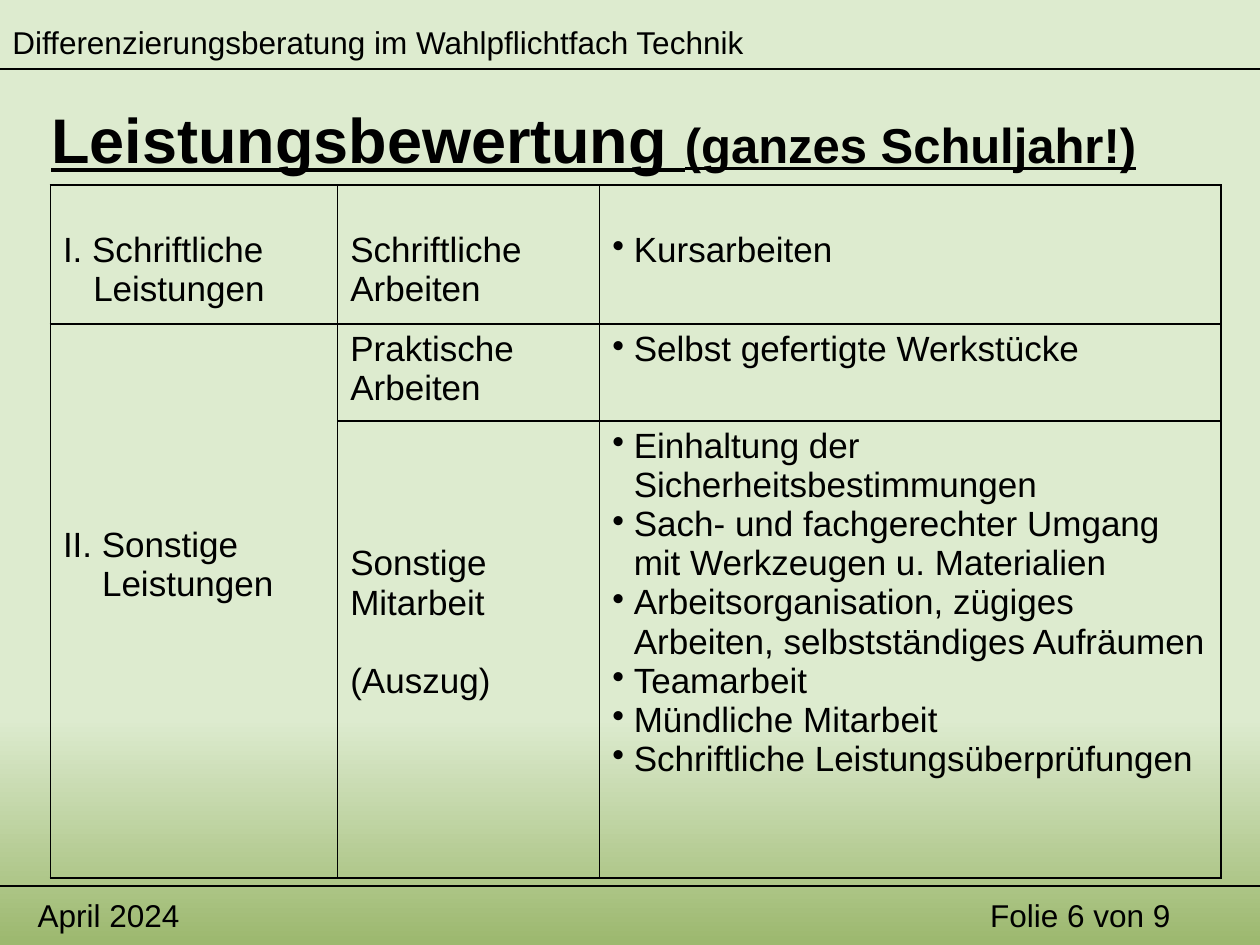
"""Builds the slide on grading in the elective subject Technik."""
from copy import deepcopy

from lxml import etree
from pptx import Presentation
from pptx import util as u
from pptx.dml.color import RGBColor
from pptx.enum import shapes, text
from pptx.oxml.ns import qn

INK, PALE, GREEN = "000000", "DDEBCF", "9CB86E"
FONT = "Arial"
WIDE, HIGH = 10, 7.5
LINE = 0.31
PAD = 0.05

LABELS = [
    ("Differenzierungsberatung im Wahlpflichtfach Technik", 0, 0.13, 6.33),
    ("April 2024", 0.2, 7.06, 1.65),
    ("Folie 6 von 9", 7.76, 7.06, 2.12),
]
RULES = [0.55, 7.03]
TITLE = [("Leistungsbewertung ", 36), ("(ganzes Schuljahr!)", 28)]
COLS = [2.28, 2.08, 4.93]
ROWS = [1.1, 0.77, 3.63]
CELLS = [
    {"at": (0, 0), "skip": 1, "hang": 0.24, "text": ["I. Schriftliche\vLeistungen"]},
    {"at": (0, 1), "skip": 1, "text": ["Schriftliche Arbeiten"]},
    {"at": (0, 2), "skip": 1, "hang": 0.17, "dot": True, "text": ["Kursarbeiten"]},
    {"at": (1, 0), "skip": 5, "hang": 0.31, "text": ["II. Sonstige\vLeistungen"]},
    {"at": (1, 1), "text": ["Praktische Arbeiten"]},
    {"at": (1, 2), "hang": 0.17, "dot": True, "text": ["Selbst gefertigte Werkstücke"]},
    {"at": (2, 1), "skip": 3, "gap": LINE, "text": ["Sonstige Mitarbeit", "(Auszug)"]},
    {"at": (2, 2), "hang": 0.17, "dot": True, "text": [
        "Einhaltung der\vSicherheitsbestimmungen",
        "Sach- und fachgerechter Umgang\vmit Werkzeugen u. Materialien",
        "Arbeitsorganisation, zügiges\vArbeiten, selbstständiges Aufräumen",
        "Teamarbeit",
        "Mündliche Mitarbeit",
        "Schriftliche Leistungsüberprüfungen",
    ]},
]


def rgb(code):
    """Turn a hex string into a colour."""
    return RGBColor.from_string(code)


def style(font, size, bold=False):
    """Set the face, size and colour of a font."""
    font.name, font.size, font.bold = FONT, u.Pt(size), bold
    font.color.rgb = rgb(INK)


def paint(slide):
    """Fill the background with a gradient that deepens at the foot."""
    fill = slide.background.fill
    fill.gradient()
    fill.gradient_angle = 270
    first = slide.element.xpath(".//p:bg//a:gs")[0]
    first.addnext(deepcopy(first))
    for stop, (place, code) in zip(fill.gradient_stops, [(0, PALE), (0.76, PALE), (1, GREEN)]):
        stop.position = place
        stop.color.rgb = rgb(code)


def box(slide, left, top, width, height):
    """Add a wrapping text box and return its frame."""
    frame = slide.shapes.add_textbox(*map(u.Inches, (left, top, width, height))).text_frame
    frame.word_wrap = True
    return frame


def rule(slide, top):
    """Draw a line across the slide."""
    line = slide.shapes.add_connector(
        shapes.MSO_CONNECTOR.STRAIGHT, 0, u.Inches(top), u.Inches(WIDE), u.Inches(top))
    line.line.color.rgb = rgb(INK)
    line.line.width = u.Pt(1)
    etree.SubElement(line.element.spPr, qn("a:effectLst"))


def frame(cell):
    """Clear the fill of a cell and draw its four borders."""
    cell.fill.background()
    props = cell._tc.get_or_add_tcPr()
    for spot, side in enumerate(("a:lnL", "a:lnR", "a:lnT", "a:lnB")):
        edge = etree.Element(qn(side), w=str(u.Pt(1)))
        fill = etree.SubElement(edge, qn("a:solidFill"))
        etree.SubElement(fill, qn("a:srgbClr"), val=INK)
        props.insert(spot, edge)


def write(cell, item):
    """Write the paragraphs of one cell with their indents and bullets."""
    cell.margin_top = u.Inches(PAD + item.get("skip", 0) * LINE)
    cell.text_frame.text = "\n".join(item["text"])
    hang = u.Inches(item.get("hang", 0))
    for spot, para in enumerate(cell.text_frame.paragraphs):
        props = para._p.get_or_add_pPr()
        props.set("marL", str(hang))
        props.set("indent", str(-hang))
        if item.get("dot"):
            etree.SubElement(props, qn("a:buChar"), char="•")
        if spot and "gap" in item:
            para.space_before = u.Inches(item["gap"])
        style(para.font, 20)


def grid(slide):
    """Build the table of grading parts."""
    shape = slide.shapes.add_table(
        len(ROWS), len(COLS), u.Inches(0.4), u.Inches(1.47),
        u.Inches(sum(COLS)), u.Inches(sum(ROWS)))
    table = shape.table
    table.first_row = table.horz_banding = False
    for col, width in zip(table.columns, COLS):
        col.width = u.Inches(width)
    for row, height in zip(table.rows, ROWS):
        row.height = u.Inches(height)
    for cell in table.iter_cells():
        frame(cell)
    table.cell(1, 0).merge(table.cell(2, 0))
    for item in CELLS:
        write(table.cell(*item["at"]), item)


def main():
    """Put the slide together and save it."""
    deck = Presentation()
    deck.slide_width, deck.slide_height = u.Inches(WIDE), u.Inches(HIGH)
    slide = deck.slides.add_slide(deck.slide_layouts[6])
    paint(slide)
    for words, left, top, width in LABELS:
        para = box(slide, left, top, width, 0.4).paragraphs[0]
        para.text = words
        style(para.font, 18)
    for top in RULES:
        rule(slide, top)
    head = box(slide, 0.31, 0.47, 9, 1.25)
    head.vertical_anchor = text.MSO_ANCHOR.MIDDLE
    for words, size in TITLE:
        run = head.paragraphs[0].add_run()
        run.text = words
        style(run.font, size, True)
        run.font.underline = True
    grid(slide)
    deck.save("out.pptx")


if __name__ == "__main__":
    main()
